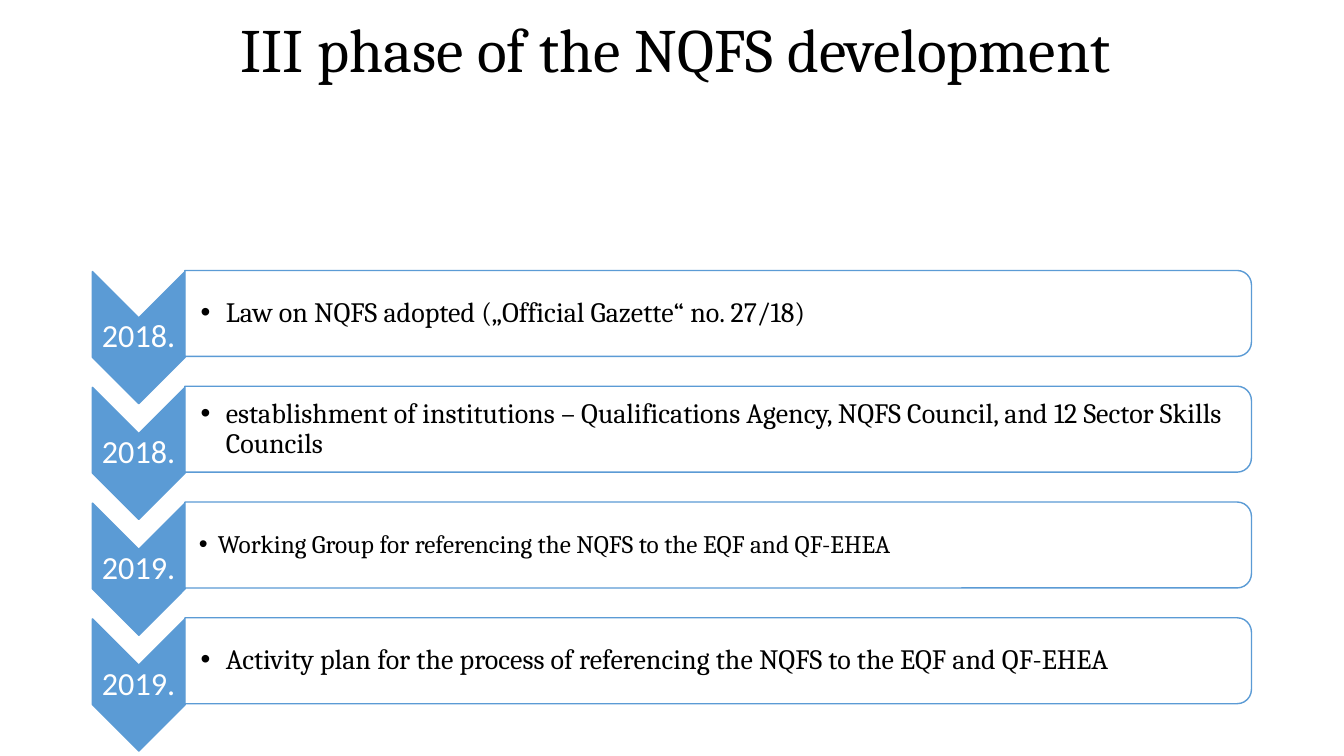
"""Build the slide on the third phase of the NQFS development."""
import lxml.etree
import pptx
import pptx.dml.color
import pptx.enum.shapes
import pptx.enum.text
import pptx.oxml.ns
import pptx.util

Pt = pptx.util.Pt
SHAPE = pptx.enum.shapes.MSO_SHAPE
ALIGN = pptx.enum.text.PP_ALIGN
qn = pptx.oxml.ns.qn

TITLE = "III phase of the NQFS development"
STEPS = [
    ("2018.", "Law on NQFS adopted („Official Gazette“ no. 27/18)", 20),
    ("2018.", "establishment of institutions – Qualifications Agency, NQFS Council, "
              "and 12 Sector Skills Councils", 20),
    ("2019.", "Working Group for referencing the NQFS to the EQF and QF-EHEA", 18),
    ("2019.", "Activity plan for the process of referencing the NQFS to the EQF and QF-EHEA", 20),
]
COLORS = {"blue": "5B9BD5", "white": "FFFFFF", "black": "000000"}
INDENTS = {20: (11.2, 18), 18: (10, 13.5)}
PITCH = 82.7
CHEVRON = {"x": 99.1, "y": 241.2, "length": 94.4, "width": 66.2}
PANEL = {"x": 513, "y": 223.9, "length": 61.4, "width": 761.8}


def rgb(name):
    return pptx.dml.color.RGBColor.from_string(COLORS[name])


def add_turned(s, kind, box, dy, fill):
    length, width = box["length"], box["width"]
    sp = s.shapes.add_shape(kind, Pt(box["x"] - length / 2), Pt(box["y"] + dy - width / 2),
                            Pt(length), Pt(width))
    sp.rotation = 90
    sp.shadow.inherit = False
    sp.fill.solid()
    sp.fill.fore_color.rgb = rgb(fill)
    sp.line.color.rgb = rgb("blue")
    sp.line.width = Pt(1)
    return sp


def write(sp, text, insets, align, size, font, color):
    tf = sp.text_frame
    left, rest = insets
    frame = {"word_wrap": True, "auto_size": pptx.enum.text.MSO_AUTO_SIZE.NONE,
             "vertical_anchor": pptx.enum.text.MSO_ANCHOR.MIDDLE, "margin_left": Pt(left),
             "margin_top": Pt(rest), "margin_right": Pt(rest), "margin_bottom": Pt(rest)}
    for name, value in frame.items():
        setattr(tf, name, value)
    p = tf.paragraphs[0]
    p.alignment, p.line_spacing = align, 0.9
    r = p.add_run()
    r.text = text
    for name, value in {"size": Pt(size), "name": font}.items():
        setattr(r.font, name, value)
    r.font.color.rgb = rgb(color)
    return p


def add_bullet(p, indent):
    pPr = p._p.get_or_add_pPr()
    pPr.set("marL", str(Pt(indent)))
    pPr.set("indent", str(-Pt(indent)))
    lxml.etree.SubElement(pPr, qn("a:buFont")).set("typeface", "Arial")
    lxml.etree.SubElement(pPr, qn("a:buChar")).set("char", "•")


def add_step(s, index, year, text, size):
    dy = index * PITCH
    add_turned(s, SHAPE.CHEVRON, CHEVRON, dy, "blue")
    label = s.shapes.add_textbox(Pt(66), Pt(226.9 + dy), Pt(66.2), Pt(28.2))
    write(label, year, (1.4, 1.4), ALIGN.CENTER, 23, "Calibri", "white")

    panel = add_turned(s, SHAPE.ROUND_2_SAME_RECTANGLE, PANEL, dy, "white")
    color = panel._element.spPr.find(qn("a:solidFill"))[0]
    lxml.etree.SubElement(color, qn("a:alpha")).set("val", "90000")
    body = s.shapes.add_textbox(Pt(132.1), Pt(196.3 + dy), Pt(758.9), Pt(55.4))
    inset, indent = INDENTS[size]
    p = write(body, text, (inset, 0.8), ALIGN.LEFT, size, "Cambria", "black")
    add_bullet(p, indent)


def main():
    prs = pptx.Presentation()
    prs.slide_width, prs.slide_height = Pt(960), Pt(540)
    s = prs.slides.add_slide(prs.slide_layouts[5])
    title = s.shapes.title
    place = {"left": 67, "top": 11.5, "width": 828, "height": 52.6}
    for name, value in place.items():
        setattr(title, name, Pt(value))
    write(title, TITLE, (7.2, 3.6), ALIGN.CENTER, 44, "Cambria", "black")
    for index, step in enumerate(STEPS):
        add_step(s, index, *step)
    prs.save("out.pptx")


if __name__ == "__main__":
    main()
